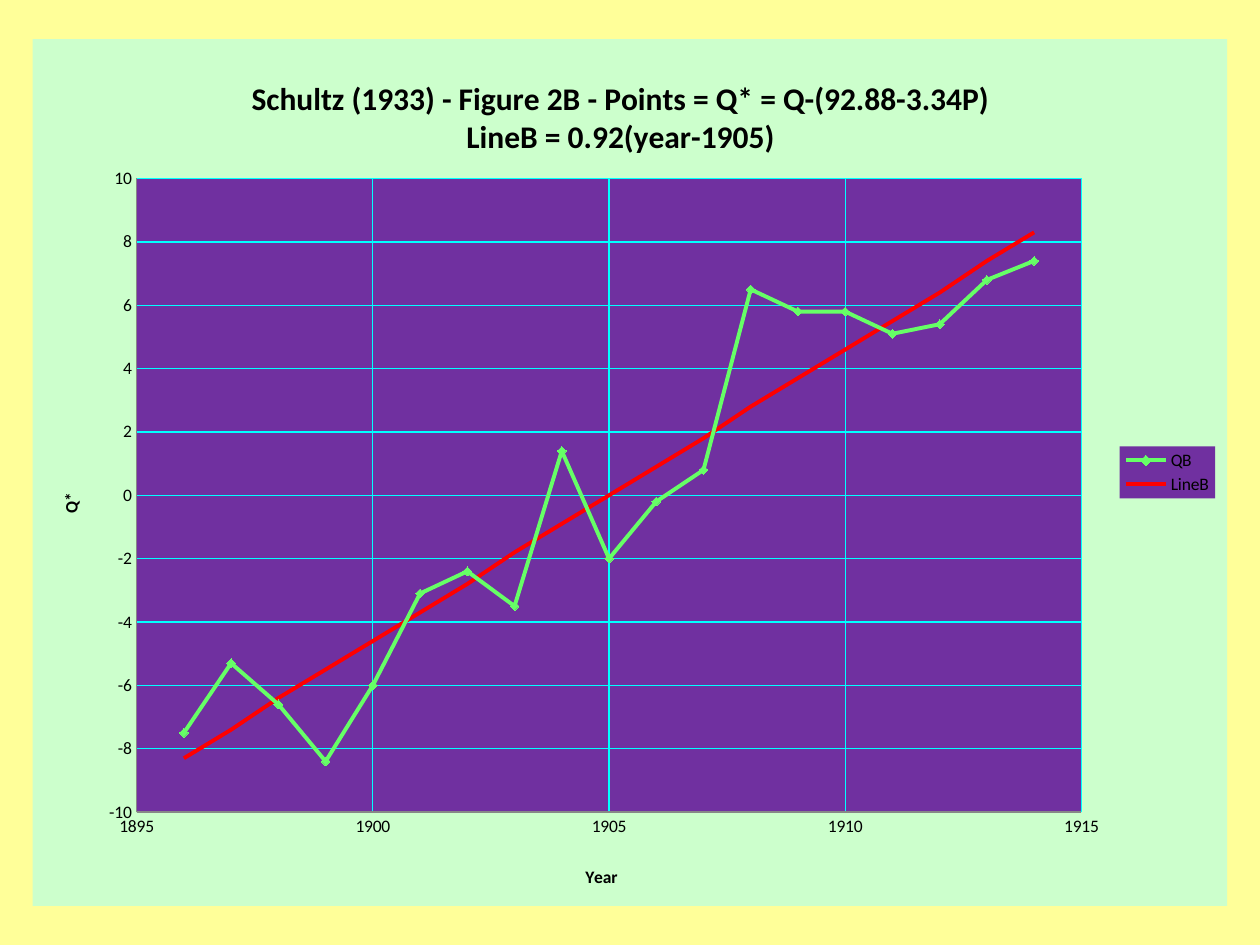
from lxml import etree
from pptx import Presentation
from pptx.chart.data import XyChartData
from pptx.dml.color import RGBColor
from pptx.enum.chart import XL_AXIS_CROSSES as Crosses, XL_CHART_TYPE as ChartType
from pptx.enum.chart import XL_LEGEND_POSITION as LegendPos, XL_MARKER_STYLE as Marker
from pptx.enum.chart import XL_TICK_MARK as Tick
from pptx.oxml import parse_xml
from pptx.oxml.ns import qn
from pptx.util import Inches, Pt

YELLOW = RGBColor(0xFF, 0xFF, 0x99)
MINT = RGBColor(0xCC, 0xFF, 0xCC)
PURPLE = RGBColor(0x70, 0x30, 0xA0)
CYAN = RGBColor(0x00, 0xFF, 0xFF)
GREEN = RGBColor(0x66, 0xFF, 0x66)
RED = RGBColor(0xFF, 0x00, 0x00)
GRAY = RGBColor(0x87, 0x87, 0x87)
BLACK = RGBColor(0x00, 0x00, 0x00)
NS = ('xmlns:c="http://schemas.openxmlformats.org/drawingml/2006/chart" '
      'xmlns:a="http://schemas.openxmlformats.org/drawingml/2006/main"')


def set_layout(el, index, inner=False, **fractions):
    """Place a chart part by fractions of the chart area."""
    for old in el.findall(qn("c:layout")):
        el.remove(old)
    layout = parse_xml(f"<c:layout {NS}><c:manualLayout/></c:layout>")
    values = {"layoutTarget": "inner"} if inner else {}
    values.update(xMode="edge", yMode="edge", **fractions)
    for tag, val in values.items():
        etree.SubElement(layout[0], qn(f"c:{tag}")).set("val", str(val))
    el.insert(index, layout)


def add_title(owner, lines, size, **place):
    """Give a chart or an axis a bold title."""
    title = owner.chart_title if hasattr(owner, "chart_title") else owner.axis_title
    tf = title.text_frame
    for i, line in enumerate(lines):
        p = tf.paragraphs[0] if i == 0 else tf.add_paragraph()
        r = p.add_run()
        r.text = line
        r.font.color.rgb = BLACK
        for name, value in dict(name="Calibri", size=Pt(size), bold=True).items():
            setattr(r.font, name, value)
    set_layout(title._element, 1, **place)


prs = Presentation()
prs.slide_width, prs.slide_height = Inches(10), Inches(7.5)
s = prs.slides.add_slide(prs.slide_layouts[6])
s.background.fill.solid()
s.background.fill.fore_color.rgb = YELLOW

# Data: residual quantity and trend line by year
years = range(1896, 1915)
qb = [-7.5, -5.3, -6.6, -8.4, -6, -3.1, -2.4, -3.5, 1.4, -2,
      -0.2, 0.8, 6.5, 5.8, 5.8, 5.1, 5.4, 6.8, 7.4]
line_b = [round(0.92 * (year - 1905), 1) for year in years]
data = XyChartData()
for name, values in (("QB", qb), ("LineB", line_b)):
    series = data.add_series(name)
    for year, value in zip(years, values):
        series.add_data_point(year, value)

chart = s.shapes.add_chart(ChartType.XY_SCATTER_LINES, Inches(0.26), Inches(0.31),
                           Inches(9.48), Inches(6.88), data).chart
chart.font.name, chart.font.size = "Calibri", Pt(10)
chart.font.color.rgb = BLACK
plot = chart.plots[0]
plot.vary_by_categories = False

# Series
for series, color in zip(plot.series, (GREEN, RED)):
    series.smooth = False
    series.format.line.color.rgb = color
    series.format.line.width = Pt(2.25)
    series.marker.style = Marker.NONE
marker = plot.series[0].marker
marker.style, marker.size = Marker.DIAMOND, 5
marker.format.fill.solid()
marker.format.fill.fore_color.rgb = GREEN
marker.format.line.color.rgb = GREEN

# Axes
x_axis, y_axis = chart.category_axis, chart.value_axis
for axis, low, high, step in ((x_axis, 1895, 1915, 5), (y_axis, -10, 10, 2)):
    settings = dict(minimum_scale=low, maximum_scale=high, major_unit=step,
                    has_major_gridlines=True, major_tick_mark=Tick.NONE,
                    minor_tick_mark=Tick.NONE, crosses=Crosses.MINIMUM)
    for name, value in settings.items():
        setattr(axis, name, value)
    axis.tick_labels.number_format = "General"
    axis.tick_labels.number_format_is_linked = False
    axis.format.line.color.rgb = GRAY
    grid = axis.major_gridlines.format.line
    grid.color.rgb, grid.width = CYAN, Pt(0.75)

# Titles
add_title(chart, ["Schultz (1933) - Figure 2B - Points = Q* = Q-(92.88-3.34P)",
                  "LineB = 0.92(year-1905)"], 18, x=0.18, y=0.04)
add_title(x_axis, ["Year"], 10, x=0.46, y=0.95)
add_title(y_axis, ["Q*"], 10, x=0.02, y=0.52)
y_axis.axis_title.text_frame._txBody.bodyPr.set("rot", "-5400000")
y_axis.axis_title.text_frame._txBody.bodyPr.set("vert", "horz")

# Legend
chart.has_legend = True
legend = chart.legend
legend.position, legend.include_in_layout = LegendPos.RIGHT, False
legend.font.name, legend.font.size = "Calibri", Pt(10)
legend.font.color.rgb = BLACK
set_layout(legend._element, 1, x=0.91, y=0.47, w=0.08, h=0.06)

# Plot position, and fills of the chart area, plot area and legend
space = chart._chartSpace
plot_area = space.chart.plotArea
set_layout(plot_area, 0, inner=True, x=0.087, y=0.161, w=0.791, h=0.731)
for el, color, before in ((space, MINT, space.find(qn("c:txPr"))),
                          (plot_area, PURPLE, None),
                          (legend._element, PURPLE, legend._element.find(qn("c:txPr")))):
    sp_pr = parse_xml(f'<c:spPr {NS}><a:solidFill><a:srgbClr val="{color}"/></a:solidFill>'
                      "<a:ln><a:noFill/></a:ln></c:spPr>")
    if before is None:
        el.append(sp_pr)
    else:
        before.addprevious(sp_pr)

prs.save("out.pptx")
